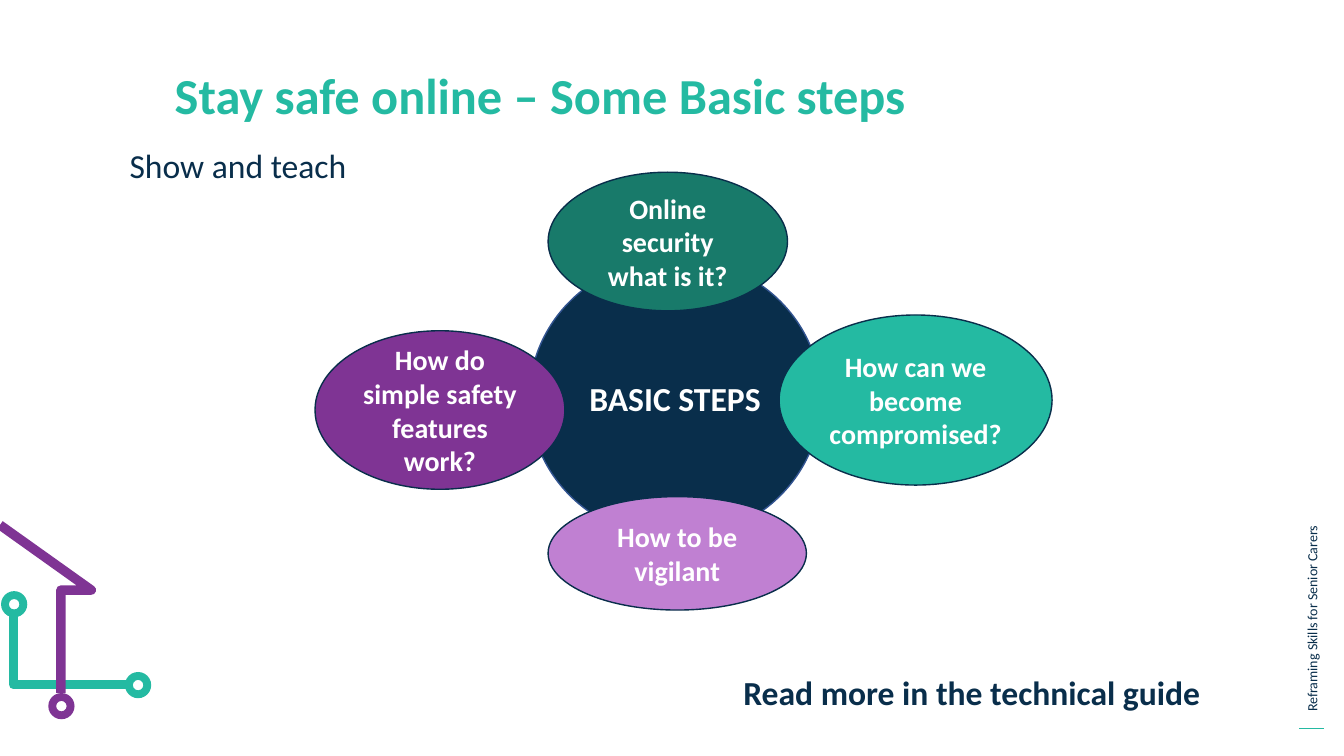
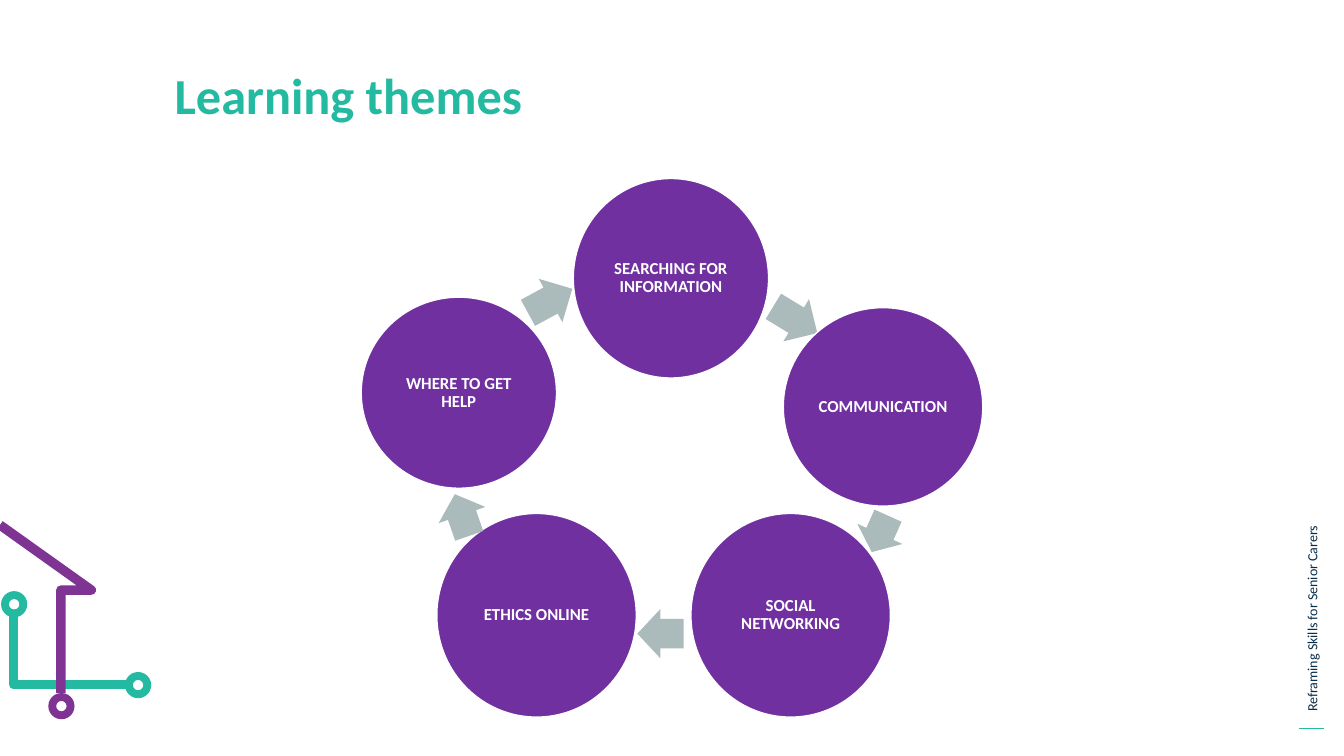
"""Build two slides on online safety steps and learning themes."""
from dataclasses import dataclass

from lxml.etree import SubElement
from pptx import Presentation
from pptx.dml.color import RGBColor
from pptx.enum.shapes import MSO_CONNECTOR, MSO_SHAPE as SHAPE
from pptx.enum.text import MSO_ANCHOR as ANCHOR, PP_ALIGN as ALIGN
from pptx.oxml.ns import qn
from pptx.util import Pt

PX = 9525
FONT = "Calibri"
COLORS = {
    "navy": "092E4B",
    "teal": "24BAA2",
    "green": "187A6A",
    "purple": "7F3494",
    "lilac": "C080D2",
    "violet": "7030A0",
    "blue": "325491",
    "grey": "ABBABA",
    "white": "FFFFFF",
}


@dataclass(frozen=True)
class Box:
    x: int
    y: int
    w: int
    h: int

    def emu(self) -> tuple[int, ...]:
        return tuple(v * PX for v in (self.x, self.y, self.w, self.h))


@dataclass(frozen=True)
class Bubble:
    text: str
    box: Box
    fill: str = "violet"
    line: str = "white"
    size: int = 12


@dataclass(frozen=True)
class Arrow:
    box: Box
    angle: float


@dataclass(frozen=True)
class Pipe:
    color: str
    points: tuple[tuple[int, int], ...]
    rings: tuple[tuple[int, int], ...]


PIPES = (
    Pipe("teal", ((13, 587), (13, 652), (122, 652)), ((13, 575), (131, 652))),
    Pipe("purple", ((0, 500), (87, 562), (58, 562), (58, 660)), ((58, 672),)),
)
PIPE_WIDTH = 9
RING = 25

STEPS = (
    Bubble("BASIC STEPS", Box(504, 246, 278, 267), "navy", "blue", 24),
    Bubble("Online security what is it?", Box(522, 164, 228, 132), "green", "navy", 20),
    Bubble("How do simple safety features work?", Box(300, 315, 238, 151), "purple", "navy", 20),
    Bubble("How can we become compromised?", Box(742, 300, 260, 162), "teal", "navy", 20),
    Bubble("How to be vigilant", Box(522, 473, 246, 108), "lilac", "navy", 20),
)
THEMES = (
    Bubble("SEARCHING FOR INFORMATION", Box(546, 170, 186, 190)),
    Bubble("COMMUNICATION", Box(746, 293, 190, 189)),
    Bubble("SOCIAL NETWORKING", Box(658, 489, 190, 194)),
    Bubble("ETHICS ONLINE", Box(416, 489, 190, 194)),
    Bubble("WHERE TO GET HELP", Box(344, 283, 186, 182)),
)
ARROWS = (
    Arrow(Box(733, 281, 49, 47), 31.3),
    Arrow(Box(819, 485, 38, 47), 114.1),
    Arrow(Box(607, 580, 44, 47), 180),
    Arrow(Box(419, 467, 42, 47), 250.9),
    Arrow(Box(500, 263, 48, 47), 331.5),
)


def rgb(name: str) -> RGBColor:
    return RGBColor.from_string(COLORS[name])


def write(sp, text: str, size: int, color: str, bold: bool = False,
          align: ALIGN = ALIGN.LEFT, spacing: float = 1.0, before: int = 0) -> None:
    tf = sp.text_frame
    tf.word_wrap = True
    p = tf.paragraphs[0]
    p.text = text
    p.alignment = align
    p.line_spacing = spacing
    p.space_before = Pt(before)
    font = p.runs[0].font
    font.name, font.size, font.bold = FONT, Pt(size), bold
    font.color.rgb = rgb(color)


def add_text(slide, box: Box, text: str, size: int, color: str, **style):
    sp = slide.shapes.add_textbox(*box.emu())
    write(sp, text, size, color, **style)
    return sp


def add_filled(slide, kind: SHAPE, box: Box, fill: str, line: str | None = None):
    sp = slide.shapes.add_shape(kind, *box.emu())
    sp.shadow.inherit = False
    sp.fill.solid()
    sp.fill.fore_color.rgb = rgb(fill)
    if line:
        sp.line.color.rgb = rgb(line)
        sp.line.width = Pt(1)
    else:
        sp.line.fill.background()
    return sp


def add_bubble(slide, bubble: Bubble, spacing: float = 1.0, inset: int | None = None) -> None:
    sp = add_filled(slide, SHAPE.OVAL, bubble.box, bubble.fill, bubble.line)
    write(sp, bubble.text, bubble.size, "white", True, ALIGN.CENTER, spacing)
    tf = sp.text_frame
    tf.vertical_anchor = ANCHOR.MIDDLE
    if inset is not None:
        tf.margin_left = tf.margin_right = tf.margin_top = tf.margin_bottom = inset * PX


def add_arrow(slide, arrow: Arrow) -> None:
    sp = add_filled(slide, SHAPE.RIGHT_ARROW, arrow.box, "grey")
    sp.adjustments[0], sp.adjustments[1] = 0.6, 0.5
    sp.rotation = arrow.angle


def add_pipe(slide, pipe: Pipe) -> None:
    start, *rest = pipe.points
    builder = slide.shapes.build_freeform(*start, scale=PX)
    builder.add_line_segments(rest, close=False)
    sp = builder.convert_to_shape()
    sp.shadow.inherit = False
    sp.fill.background()
    sp.line.color.rgb = rgb(pipe.color)
    sp.line.width = PIPE_WIDTH * PX
    SubElement(sp.element.spPr.find(qn("a:ln")), qn("a:round"))
    for x, y in pipe.rings:
        box = Box(x - RING // 2, y - RING // 2, RING, RING)
        ring = add_filled(slide, SHAPE.DONUT, box, pipe.color)
        ring.adjustments[0] = 0.3


def add_base(prs, title: str):
    slide = prs.slides.add_slide(prs.slide_layouts[6])
    footer = add_text(slide, Box(1083, 508, 333, 26),
                      "Reframing Skills for Senior Carers", 10, "navy")
    footer.rotation = 270
    rule = slide.shapes.add_connector(
        MSO_CONNECTOR.STRAIGHT, 1261 * PX, 694 * PX, 1237 * PX, 694 * PX)
    rule.line.color.rgb = rgb("teal")
    rule.line.width = Pt(0.75)
    SubElement(rule.element.spPr, qn("a:effectLst"))
    for pipe in PIPES:
        add_pipe(slide, pipe)
    add_text(slide, Box(157, 63, 1038, 107), title, 36, "teal",
             bold=True, spacing=0.9, before=10)
    return slide


def build_steps(prs) -> None:
    slide = add_base(prs, "Stay safe online – Some Basic steps")
    add_text(slide, Box(114, 138, 1026, 514), "Show and teach", 24, "navy",
             spacing=0.9, before=10)
    for bubble in STEPS:
        add_bubble(slide, bubble)
    add_text(slide, Box(586, 640, 679, 44), "Read more in the technical guide", 24, "navy",
             bold=True, align=ALIGN.CENTER, spacing=0.9, before=10)


def build_themes(prs) -> None:
    slide = add_base(prs, "Learning themes")
    for bubble, arrow in zip(THEMES, ARROWS):
        add_bubble(slide, bubble, spacing=0.9, inset=2)
        add_arrow(slide, arrow)


def main() -> None:
    prs = Presentation()
    prs.slide_width, prs.slide_height = 1280 * PX, 720 * PX
    build_steps(prs)
    build_themes(prs)
    prs.save("out.pptx")


if __name__ == "__main__":
    main()
